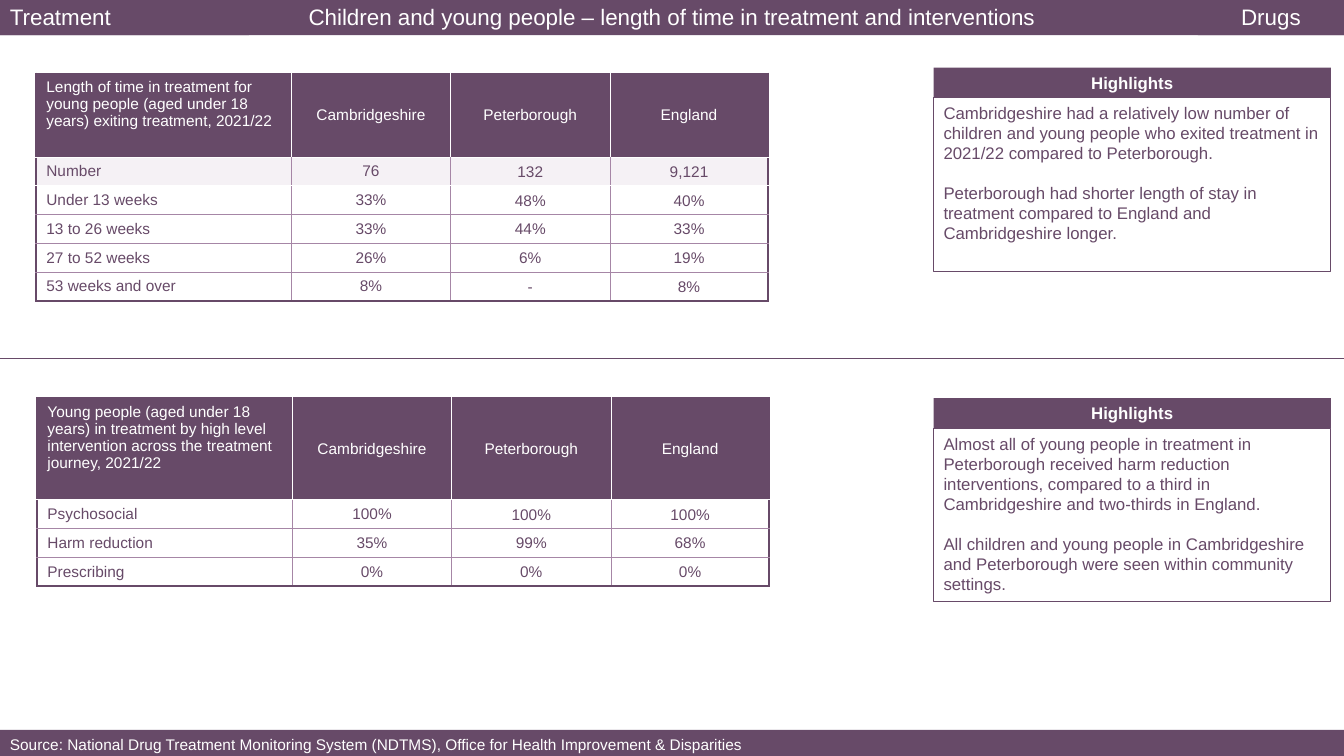
from lxml.etree import SubElement
from pptx import Presentation
from pptx.dml.color import RGBColor
from pptx.enum.shapes import MSO_CONNECTOR
from pptx.enum.text import MSO_ANCHOR, PP_ALIGN
from pptx.oxml.ns import qn
from pptx.util import Inches, Pt

THEME = {
    "font": "Arial", "plum": "674A68", "lilac": "A686A6", "pale": "F5F1F5", "white": "FFFFFF",
    "title": 16, "body": 12, "table": 11,
}
WIDTH, HEIGHT = 13.33, 7.5
CENTER = PP_ALIGN.CENTER

BANNERS = [
    ("Children and young people – length of time in treatment and interventions", 0, WIDTH, CENTER),
    ("Treatment", 0, 2.47, PP_ALIGN.LEFT),
    ("Drugs", 11.88, 1.45, CENTER),
]
SOURCE = ("Source: National Drug Treatment Monitoring System (NDTMS), "
          "Office for Health Improvement & Disparities")
AREAS = ["Cambridgeshire", "Peterborough", "England"]
SECTIONS = [
    {
        "table_at": (0.36, 0.73), "header_height": 0.83, "shaded_row": 1, "highlights_top": 0.67,
        "rows": [
            ["Length of time in treatment for young people (aged under 18 years) "
             "exiting treatment, 2021/22", *AREAS],
            ["Number", "76", "132", "9,121"],
            ["Under 13 weeks", "33%", "48%", "40%"],
            ["13 to 26 weeks", "33%", "44%", "33%"],
            ["27 to 52 weeks", "26%", "6%", "19%"],
            ["53 weeks and over", "8%", "-", "8%"],
        ],
        "highlights": [
            "Cambridgeshire had a relatively low number of children and young people who exited "
            "treatment in 2021/22 compared to Peterborough.",
            "Peterborough had shorter length of stay in treatment compared to England and "
            "Cambridgeshire longer.",
        ],
    },
    {
        "table_at": (0.37, 3.95), "header_height": 1.01, "shaded_row": None, "highlights_top": 3.95,
        "rows": [
            ["Young people (aged under 18 years) in treatment by high level intervention "
             "across the treatment journey, 2021/22", *AREAS],
            ["Psychosocial", "100%", "100%", "100%"],
            ["Harm reduction", "35%", "99%", "68%"],
            ["Prescribing", "0%", "0%", "0%"],
        ],
        "highlights": [
            "Almost all of young people in treatment in Peterborough received harm reduction "
            "interventions, compared to a third in Cambridgeshire and two-thirds in England.",
            "All children and young people in Cambridgeshire and Peterborough were seen within "
            "community settings.",
        ],
    },
]
COLUMN_WIDTHS = [2.53, 1.58, 1.58, 1.57]
ROW_HEIGHT = 0.285
HIGHLIGHTS_LEFT, HIGHLIGHTS_WIDTH = 9.26, 3.94
HEADING_HEIGHT, HIGHLIGHTS_HEIGHT = 0.3, 1.72


def color(name):
    return RGBColor.from_string(THEME[name])


def write(frame, *texts, size="body", ink="white", bold=False, align=PP_ALIGN.LEFT, gap=0):
    frame.word_wrap = True
    for index, text in enumerate(texts):
        para = frame.add_paragraph() if index else frame.paragraphs[0]
        para.alignment = align
        para.space_before = Pt(gap if index else 0)
        span = para.add_run()
        span.text = text
        span.font.name = THEME["font"]
        span.font.size = Pt(THEME[size])
        span.font.bold = bold
        span.font.color.rgb = color(ink)


def add_box(page, left, top, width, height, fill=None, line=None):
    box = page.shapes.add_textbox(Inches(left), Inches(top), Inches(width), Inches(height))
    if fill:
        box.fill.solid()
        box.fill.fore_color.rgb = color(fill)
    if line:
        box.line.color.rgb = color(line)
        box.line.width = Pt(0.75)
    return box.text_frame


def set_borders(cell, sides):
    properties = cell._tc.get_or_add_tcPr()
    for tag, name in sides.items():
        weight = 1.5 if name == "plum" else 0.75
        border = SubElement(properties, qn(f"a:{tag}"), w=str(Pt(weight)))
        SubElement(SubElement(border, qn("a:solidFill")), qn("a:srgbClr"), val=THEME[name])


def add_grid(page, section):
    rows, shaded = section["rows"], section["shaded_row"]
    left, top = section["table_at"]
    heights = [section["header_height"]] + [ROW_HEIGHT] * (len(rows) - 1)
    grid = page.shapes.add_table(len(rows), len(COLUMN_WIDTHS), Inches(left), Inches(top),
                                 Inches(sum(COLUMN_WIDTHS)), Inches(sum(heights))).table
    grid.first_row = grid.horz_banding = False
    for column, width in zip(grid.columns, COLUMN_WIDTHS):
        column.width = Inches(width)

    def across(edge):
        if edge in (0, len(rows)):
            return "plum"
        return "white" if edge == 1 or edge - 1 == shaded else "lilac"

    def down(edge, row):
        if edge in (0, len(COLUMN_WIDTHS)):
            return "plum"
        return "lilac" if row else "white"

    for r, values in enumerate(rows):
        grid.rows[r].height = Inches(heights[r])
        for c, value in enumerate(values):
            cell = grid.cell(r, c)
            set_borders(cell, {"lnL": down(c, r), "lnR": down(c + 1, r),
                               "lnT": across(r), "lnB": across(r + 1)})
            fill = "plum" if r == 0 else "pale" if r == shaded else None
            if fill:
                cell.fill.solid()
                cell.fill.fore_color.rgb = color(fill)
            else:
                cell.fill.background()
            if r and c > 1:
                cell.margin_left = cell.margin_right = cell.margin_top = Inches(0.01)
                cell.margin_bottom = 0
            cell.vertical_anchor = MSO_ANCHOR.MIDDLE if r or c else MSO_ANCHOR.TOP
            write(cell.text_frame, value, size="table", ink="plum" if r else "white",
                  align=CENTER if c else PP_ALIGN.LEFT)


def add_highlights(page, section):
    top = section["highlights_top"]
    body = add_box(page, HIGHLIGHTS_LEFT, top + HEADING_HEIGHT, HIGHLIGHTS_WIDTH,
                   HIGHLIGHTS_HEIGHT, line="plum")
    write(body, *section["highlights"], ink="plum", gap=14)
    heading = add_box(page, HIGHLIGHTS_LEFT, top, HIGHLIGHTS_WIDTH, HEADING_HEIGHT, fill="plum")
    write(heading, "Highlights", bold=True, align=CENTER)


def add_divider(page, top):
    divider = page.shapes.add_connector(MSO_CONNECTOR.STRAIGHT, 0, Inches(top),
                                        Inches(WIDTH), Inches(top))
    divider.line.color.rgb = color("plum")
    divider.line.width = Pt(0.5)
    SubElement(divider._element.spPr, qn("a:effectLst"))


def main():
    deck = Presentation()
    deck.slide_width, deck.slide_height = Inches(WIDTH), Inches(HEIGHT)
    page = deck.slides.add_slide(deck.slide_layouts[6])
    for text, left, width, align in BANNERS:
        write(add_box(page, left, -0.02, width, 0.37, fill="plum"), text, size="title", align=align)
    for section in SECTIONS:
        add_grid(page, section)
        add_highlights(page, section)
    add_divider(page, 3.56)
    write(add_box(page, 0, 7.24, WIDTH, 0.29, fill="plum"), SOURCE, size="table")
    deck.save("out.pptx")


if __name__ == "__main__":
    main()
